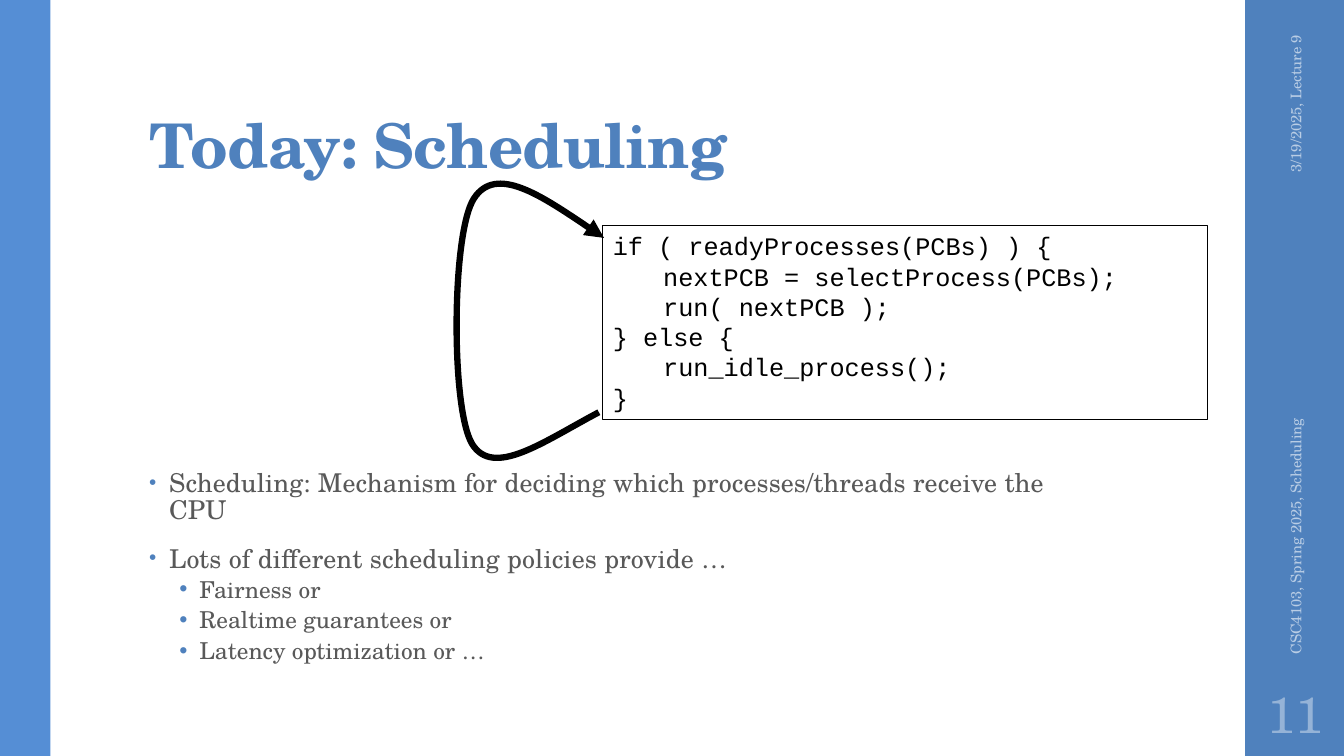
from lxml import etree
from pptx import Presentation
from pptx.dml.color import RGBColor
from pptx.enum import shapes, text
from pptx.oxml import ns
from pptx.util import Pt

PX = 9144
SERIF, MONO = "TeX Gyre Schola", "Courier New"
BLUE, LIGHT_BLUE, BLACK, GREY = "4F81BD", "558ED5", "000000", "595959"
PALE, NUMBER_BLUE = "B9CDE5", "95B3D7"
CODE = [
    "if ( readyProcesses(PCBs) ) {",
    "\tnextPCB = selectProcess(PCBs);",
    "\trun( nextPCB );",
    "} else {",
    "\trun_idle_process();",
    "}",
]
POINTS = [
    (0, "Scheduling: Mechanism for deciding which processes/threads receive the CPU"),
    (0, "Lots of different scheduling policies provide …"),
    (1, "Fairness or"),
    (1, "Realtime guarantees or"),
    (1, "Latency optimization or …"),
]
LEVELS = [
    dict(indent=20, spacing=0.85, before=14, after=2, size=18.5, track=10, bullet=80),
    dict(indent=50, spacing=0.8, before=3, after=3, size=16.6, track=0, bullet=100),
]
LOOP = [(594, 409), (539, 438), (489, 475), (468, 440), (447, 404),
        (448, 231), (470, 197), (492, 163), (546, 200), (599, 236)]


def color(hex_code):
    """Turn a hex string into a colour."""
    return RGBColor.from_string(hex_code)


def emu(box):
    """Scale a px box to EMU."""
    return [value * PX for value in box]


def child(parent, tag, **attributes):
    """Append a drawing element."""
    return etree.SubElement(parent, ns.qn(tag), attributes)


def style(paragraph, size, hue, face=SERIF, bold=False, track=0):
    """Set the font of a paragraph."""
    font = paragraph.font
    font.size, font.name, font.bold = Pt(size), face, bold
    font.color.rgb = color(hue)
    if track:
        font._element.set("spc", str(track))


def rectangle(slide, box, fill=None):
    """Add a plain rectangle, filled or hollow."""
    area = slide.shapes.add_shape(shapes.MSO_SHAPE.RECTANGLE, *emu(box))
    area.shadow.inherit = False
    if fill:
        area.fill.solid()
        area.fill.fore_color.rgb = color(fill)
        area.line.fill.background()
    else:
        area.fill.background()
    return area


def label(slide, box, words, size, hue, anchor=text.MSO_ANCHOR.MIDDLE,
          align=text.PP_ALIGN.LEFT, rotation=0, inset=(10, 5, 10, 5), **look):
    """Add one line of text and return its paragraph."""
    area = slide.shapes.add_textbox(*emu(box))
    area.rotation = rotation
    frame = area.text_frame
    frame.word_wrap = True
    frame.vertical_anchor = anchor
    (frame.margin_left, frame.margin_top,
     frame.margin_right, frame.margin_bottom) = emu(inset)
    paragraph = frame.paragraphs[0]
    paragraph.text, paragraph.alignment = words, align
    style(paragraph, size, hue, **look)
    return paragraph


def side_bands(slide, left, top, width, height):
    """Draw both side bands and the turned footer texts."""
    band = left + width - 98
    rectangle(slide, (band, top, 100, height), BLUE)
    rectangle(slide, (left, top, 50, height), LIGHT_BLUE)
    label(slide, (band - 54, top + 109, 208, 40), "3/19/2025, Lecture 9", 10.5, PALE,
          align=text.PP_ALIGN.RIGHT, rotation=270)
    label(slide, (band - 146, top + 443, 392, 40), "CSC4103, Spring 2025, Scheduling",
          10.5, PALE, rotation=270)
    label(slide, (band, top + 675, 100, 65), "11", 36, NUMBER_BLUE,
          align=text.PP_ALIGN.CENTER, inset=(5, 5, 5, 5))


def title(slide, box):
    """Write the heading."""
    heading = label(slide, box, "Today: Scheduling", 44, BLUE,
                    anchor=text.MSO_ANCHOR.BOTTOM, inset=(10, 3, 10, 5),
                    bold=True, track=-50)
    heading.line_spacing = 0.9


def bullets(slide, box):
    """Write the two-level bullet list."""
    frame = slide.shapes.add_textbox(*emu(box)).text_frame
    frame.word_wrap = True
    for index, (level, words) in enumerate(POINTS):
        rule = LEVELS[level]
        point = frame.add_paragraph() if index else frame.paragraphs[0]
        point.text, point.level = words, level
        point.line_spacing = rule["spacing"]
        point.space_before = Pt(rule["before"] if index else 0)
        point.space_after = Pt(rule["after"])
        properties = point._p.get_or_add_pPr()
        properties.set("marL", str(rule["indent"] * PX))
        properties.set("indent", str(-20 * PX))
        child(child(properties, "a:buClr"), "a:srgbClr", val=BLUE)
        child(properties, "a:buSzPct", val=str(rule["bullet"] * 1000))
        child(properties, "a:buFont", typeface="Arial")
        child(properties, "a:buChar", char="•")
        style(point, rule["size"], GREY, track=rule["track"])


def code_box(slide, box):
    """Draw the outlined listing."""
    listing = rectangle(slide, box)
    listing.line.color.rgb = color(BLACK)
    listing.line.width = Pt(0.75)
    frame = listing.text_frame
    frame.word_wrap = True
    frame.vertical_anchor = text.MSO_ANCHOR.TOP
    for index, words in enumerate(CODE):
        line = frame.add_paragraph() if index else frame.paragraphs[0]
        line.text, line.alignment = words, text.PP_ALIGN.LEFT
        style(line, 18, BLACK, MONO)


def loop_arrow(slide, left, top):
    """Draw the curved arrow from the end of the listing to its start."""
    start, *controls = [(left + x - 598, top + y - 224) for x, y in LOOP]
    builder = slide.shapes.build_freeform(*start, scale=PX)
    builder.add_line_segments(controls, close=False)
    loop = builder.convert_to_shape()
    loop.shadow.inherit = False
    loop.fill.background()
    loop.line.color.rgb = color(BLACK)
    loop.line.width = Pt(4.5)
    outline = loop.line._get_or_add_ln()
    child(outline, "a:round")
    child(outline, "a:tailEnd", type="triangle")
    route = loop._element.xpath(".//a:path")[0]
    segments = route.findall(ns.qn("a:lnTo"))
    for first in range(0, len(segments), 3):
        curve = child(route, "a:cubicBezTo")
        for segment in segments[first:first + 3]:
            curve.append(segment[0])
            route.remove(segment)


def main():
    """Build and save the slide."""
    deck = Presentation()
    deck.slide_width, deck.slide_height = emu((1333, 750))
    slide = deck.slides.add_slide(deck.slide_layouts[6])
    side_bands(slide, 0, 0, 1333, 750)
    title(slide, (138, 32, 1060, 153))
    bullets(slide, (138, 463, 940, 213))
    code_box(slide, (598, 224, 600, 192))
    loop_arrow(slide, 598, 224)
    deck.save("out.pptx")


if __name__ == "__main__":
    main()
